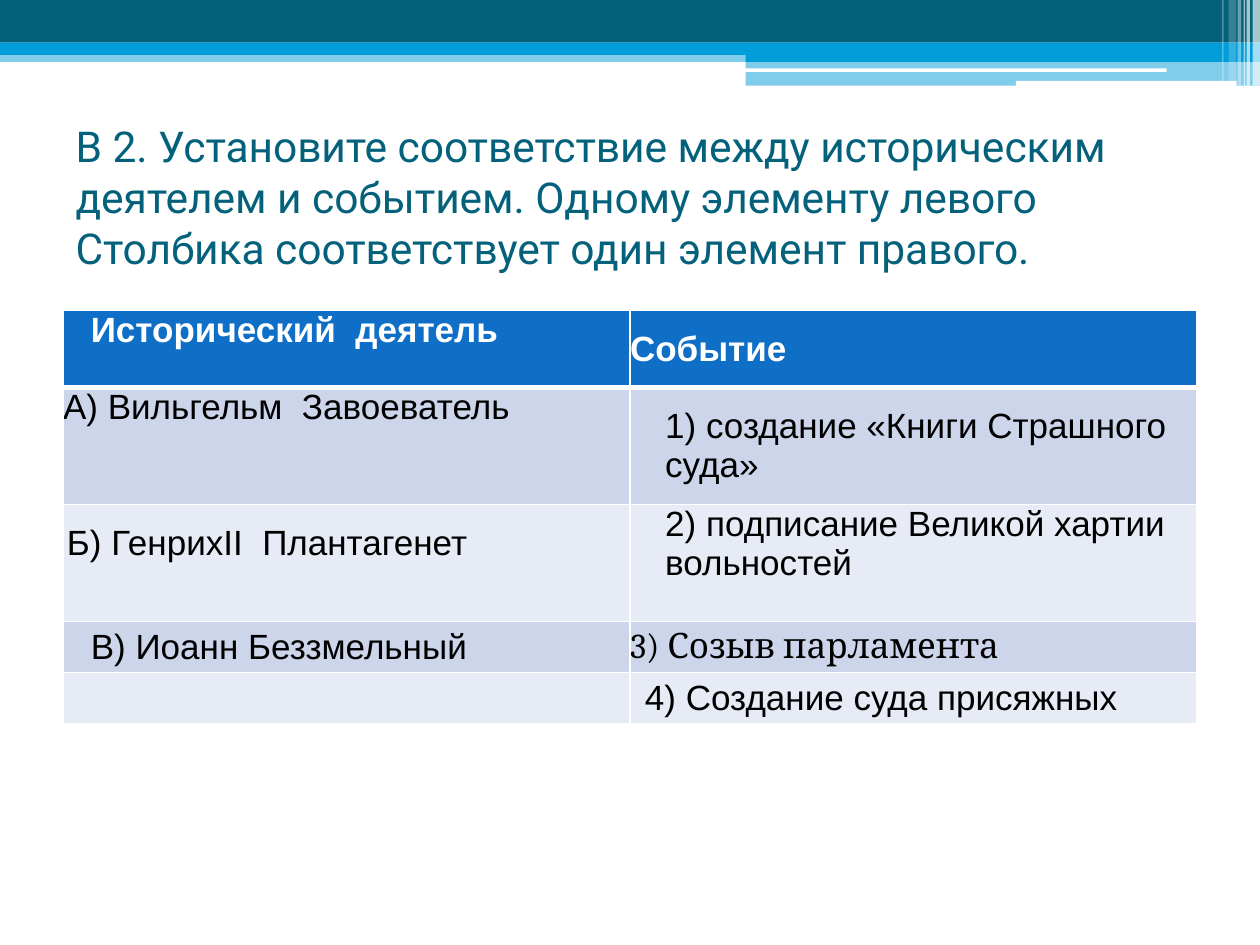
from lxml.etree import SubElement
from pptx import Presentation
from pptx.dml.color import RGBColor
from pptx.enum.shapes import MSO_SHAPE
from pptx.enum.text import MSO_ANCHOR, MSO_AUTO_SIZE, PP_ALIGN
from pptx.oxml.ns import qn
from pptx.util import Cm, Pt


def paint(target, colour, alpha=100):
    target.solid()
    target.fore_color.rgb = RGBColor.from_string(colour)
    if alpha < 100:
        srgb = target._xPr.find(qn("a:solidFill")).find(qn("a:srgbClr"))
        SubElement(srgb, qn("a:alpha"), val=str(alpha * 1000))


def add_border(cell, side, points):
    line = SubElement(cell._tc.get_or_add_tcPr(), qn(f"a:{side}"), w=str(Pt(points)))
    fill = SubElement(line, qn("a:solidFill"))
    SubElement(fill, qn("a:srgbClr"), val="FFFFFF")


DARK, BLUE, WHITE = "04617B", "009DD9", "FFFFFF"
HEADER, BAND, PALE = "0F6FC6", "CCD5EA", "E7EBF5"
TOP, MIDDLE = MSO_ANCHOR.TOP, MSO_ANCHOR.MIDDLE
RECT, ROUND = MSO_SHAPE.RECTANGLE, MSO_SHAPE.ROUNDED_RECTANGLE

presentation = Presentation()
presentation.slide_width, presentation.slide_height = Cm(25.4), Cm(19.05)
slide = presentation.slides.add_slide(presentation.slide_layouts[5])

ribbons = [
    (RECT, 0, 1.02, 25.4, 0.23, BLUE, 50),
    (RECT, 0, 0, 25.4, 0.86, DARK, 100),
    (RECT, 0, 0.86, 25.4, 0.25, BLUE, 100),
    (RECT, 15.03, 1, 10.37, 0.25, BLUE, 100),
    (RECT, 15.03, 1.23, 10.37, 0.5, BLUE, 50),
    (ROUND, 15.02, 1.38, 8.5, 0.07, WHITE, 100),
    (ROUND, 20.48, 1.63, 4.45, 0.1, WHITE, 100),
]
stripes = [
    (25.25, 0.15, 1.73, 65),
    (25.13, 0.07, 1.73, 65),
    (25.07, 0.03, 1.73, 60),
    (24.95, 0.07, 1.73, 40),
    (24.77, 0.15, 1.63, 20),
    (24.64, 0.03, 1.63, 30),
]
ribbons += [(RECT, left, 0, width, height, WHITE, alpha)
            for left, width, height, alpha in stripes]
for preset, left, top, width, height, colour, alpha in ribbons:
    ribbon = slide.shapes.add_shape(preset, Cm(left), Cm(top), Cm(width), Cm(height))
    ribbon.shadow.inherit = False
    ribbon.line.fill.background()
    paint(ribbon.fill, colour, alpha)

task = slide.shapes.title
task.left, task.top, task.width, task.height = Cm(1.27), Cm(3.18), Cm(22.86), Cm(2.97)
task_text = task.text_frame
task_text.word_wrap = True
task_text.auto_size = MSO_AUTO_SIZE.NONE
task_text.vertical_anchor = MSO_ANCHOR.BOTTOM
task_text.margin_bottom = Cm(0.64)
task_text.paragraphs[0].alignment = PP_ALIGN.LEFT
question = task_text.paragraphs[0].add_run()
question.text = ("В 2. Установите соответствие между историческим деятелем и событием. "
                 "Одному элементу левого Столбика соответствует один элемент правого.")
question.font.name, question.font.size = "Roboto", Pt(24.3)
question.font.color.rgb = RGBColor.from_string(DARK)

rows = [
    (1.55, ("Исторический  деятель", 0.56, TOP, 0), ("Событие", 0, MIDDLE, 0)),
    (2.36, ("А) Вильгельм  Завоеватель", 0, TOP, 0),
     ("1) создание «Книги Страшного суда»", 0.71, MIDDLE, 0)),
    (2.36, ("Б) ГенрихII  Плантагенет", 0.08, MIDDLE, 0.8),
     ("2) подписание Великой хартии  вольностей", 0.71, TOP, 0)),
    (1.03, ("В) Иоанн Беззмельный", 0.56, MIDDLE, 0),
     ("3) Созыв парламента", 0, MIDDLE, 0)),
    (1.03, ("", 0, MIDDLE, 0), ("4) Создание суда присяжных", 0.3, MIDDLE, 0)),
]
matching = slide.shapes.add_table(
    len(rows), 2, Cm(1.27), Cm(6.26), Cm(22.86), Cm(sum(row[0] for row in rows))).table
matching.first_row = matching.horz_banding = False

for row_index, (height, *entries) in enumerate(rows):
    matching.rows[row_index].height = Cm(height)
    is_header = row_index == 0
    for column_index, (wording, indent, anchor, bottom) in enumerate(entries):
        cell = matching.cell(row_index, column_index)
        cell.margin_left = cell.margin_right = cell.margin_top = 0
        cell.margin_bottom = Cm(bottom)
        cell.vertical_anchor = anchor
        for side in ("lnL", "lnR", "lnT", "lnB"):
            thick = (is_header and side == "lnB") or (row_index == 1 and side == "lnT")
            add_border(cell, side, 3 if thick else 1)
        paint(cell.fill, HEADER if is_header else BAND if row_index % 2 else PALE)
        if not wording:
            continue
        paragraph = cell.text_frame.paragraphs[0]
        paragraph._p.get_or_add_pPr().set("marL", str(Cm(indent)))
        entry = paragraph.add_run()
        entry.text = wording
        entry.font.name = "Cambria" if wording.startswith("3)") else "Arial"
        entry.font.size, entry.font.bold = Pt(20), is_header
        entry.font.color.rgb = RGBColor.from_string(WHITE if is_header else "000000")

presentation.save("out.pptx")
